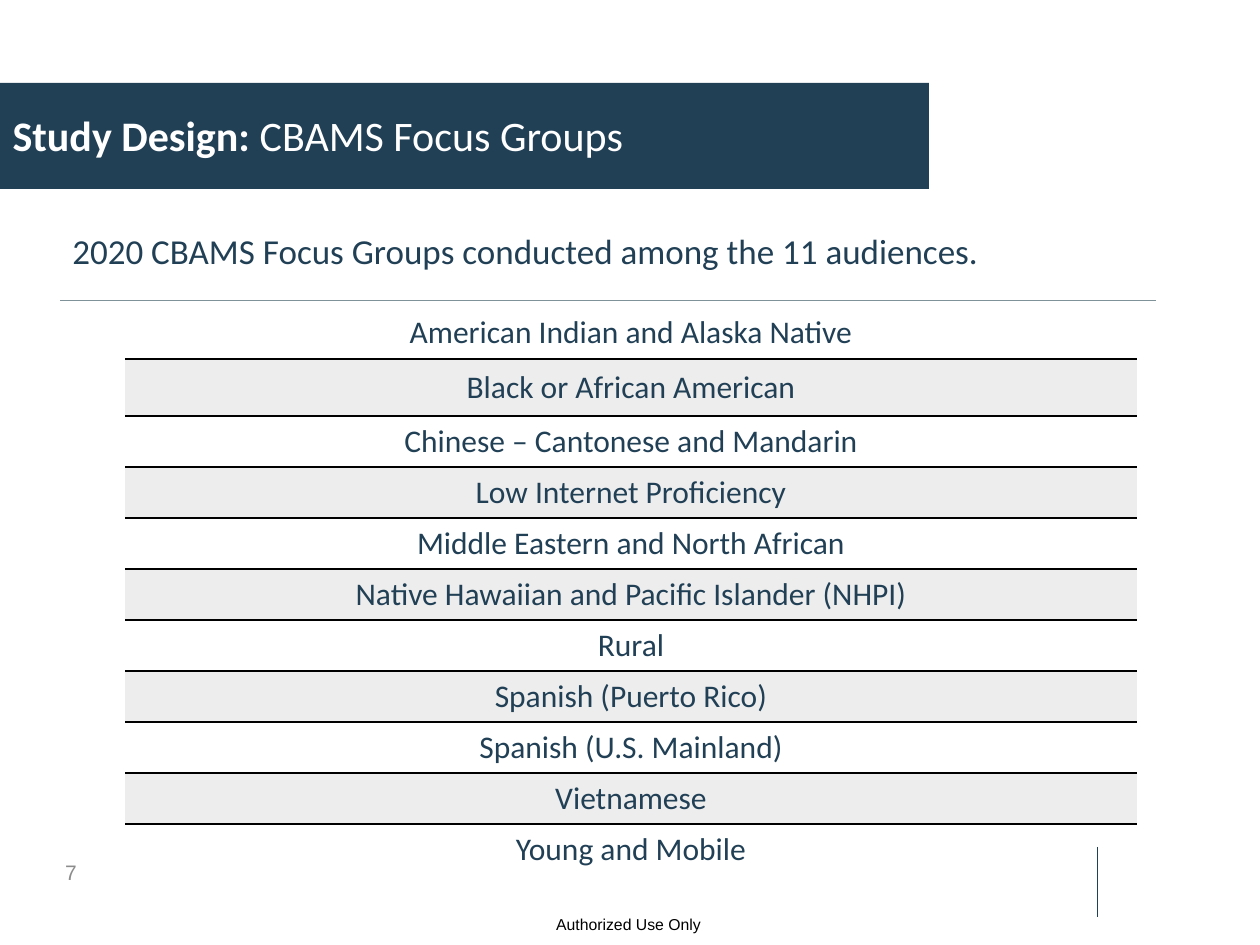
from dataclasses import dataclass

from lxml.etree import SubElement
from pptx import Presentation
from pptx.dml.color import RGBColor
from pptx.enum.shapes import MSO_CONNECTOR, MSO_SHAPE
from pptx.enum.text import MSO_ANCHOR, MSO_AUTO_SIZE, PP_ALIGN
from pptx.oxml.ns import qn
from pptx.util import Emu, Pt


@dataclass(frozen=True)
class Theme:
    navy: str = "214056"
    white: str = "FFFFFF"
    black: str = "000000"
    grey: str = "8C8C8C"
    rule: str = "7F9299"
    band: str = "A5A5A5"
    band_alpha: int = 20
    head: str = "Calibri"
    small: str = "Arial"
    title_size: int = 24
    lead_size: int = 20
    cell_size: int = 18
    page_size: int = 12
    foot_size: int = 9


THEME = Theme()
PLAIN_GRID = "{2D5ABB26-0587-4C30-8999-92F81FD0307C}"  # no style, no grid
GROUPS = [
    "American Indian and Alaska Native",
    "Black or African American",
    "Chinese – Cantonese and Mandarin",
    "Low Internet Proficiency",
    "Middle Eastern and North African",
    "Native Hawaiian and Pacific Islander (NHPI)",
    "Rural",
    "Spanish (Puerto Rico)",
    "Spanish (U.S. Mainland)",
    "Vietnamese",
    "Young and Mobile",
]


def px(n):
    return Emu(round(n * 914400 / 126))


def rgb(code):
    return RGBColor.from_string(code)


def style(para, face, size, color, align):
    para.alignment = align
    para.font.name = face
    para.font.size = Pt(size)
    para.font.color.rgb = rgb(color)


def add_text(slide, box, text, face, size, color, align):
    frame = slide.shapes.add_textbox(*map(px, box)).text_frame
    frame.word_wrap = True
    para = frame.paragraphs[0]
    para.text = text
    style(para, face, size, color, align)
    return frame


def add_rule(slide, x1, y1, x2, y2, color):
    line = slide.shapes.add_connector(
        MSO_CONNECTOR.STRAIGHT, px(x1), px(y1), px(x2), px(y2))
    line.line.color.rgb = rgb(color)
    line.line.width = Pt(0.5)
    SubElement(line._element.spPr, qn("a:effectLst"))


def add_banner(slide, x, y, w, h):
    bar = slide.shapes.add_shape(MSO_SHAPE.RECTANGLE, *map(px, (x, y, w, h)))
    bar.shadow.inherit = False
    bar.fill.solid()
    bar.fill.fore_color.rgb = rgb(THEME.navy)
    bar.line.fill.background()

    title = slide.shapes.title
    # Bring the title in front of the bar
    slide.shapes._spTree.append(title._element)
    title.left, title.top = px(x), px(y + 15)
    title.width, title.height = px(w - 10), px(h - 32)
    frame = title.text_frame
    frame.auto_size = MSO_AUTO_SIZE.NONE
    frame.vertical_anchor = MSO_ANCHOR.MIDDLE
    para = frame.paragraphs[0]
    for text, bold in (("Study Design: ", True), ("CBAMS Focus Groups", False)):
        run = para.add_run()
        run.text = text
        run.font.bold = bold
    style(para, THEME.head, THEME.title_size, THEME.white, PP_ALIGN.LEFT)


def add_lead(slide, x, y, w, h):
    frame = add_text(slide, (x, y, w - 77, h - 21),
                     "2020 CBAMS Focus Groups conducted among the 11 audiences.",
                     THEME.head, THEME.lead_size, THEME.navy, PP_ALIGN.JUSTIFY)
    frame.paragraphs[0].space_after = Pt(6)
    add_rule(slide, x, y + h, x + w, y + h, THEME.rule)


def add_edge(cell, side):
    edge = SubElement(cell._tc.get_or_add_tcPr(), qn(f"a:{side}"), w=str(Pt(1)))
    fill = SubElement(edge, qn("a:solidFill"))
    SubElement(fill, qn("a:srgbClr"), val=THEME.black)


def shade(cell):
    cell.fill.solid()
    cell.fill.fore_color.rgb = rgb(THEME.band)
    color = cell._tc.tcPr.find(f"{qn('a:solidFill')}/{qn('a:srgbClr')}")
    SubElement(color, qn("a:alpha"), val=str(THEME.band_alpha * 1000))


def add_groups(slide, x, y, w):
    """One row per audience, every second one shaded, lines between rows."""
    heights = [52, 57] + [51] * (len(GROUPS) - 2)
    table = slide.shapes.add_table(
        len(GROUPS), 1, px(x), px(y), px(w), px(sum(heights))).table
    table.first_row = table.horz_banding = False
    table._tbl.tblPr.find(qn("a:tableStyleId")).text = PLAIN_GRID
    last = len(GROUPS) - 1
    for i, (name, height) in enumerate(zip(GROUPS, heights)):
        table.rows[i].height = px(height)
        cell = table.cell(i, 0)
        cell.vertical_anchor = MSO_ANCHOR.MIDDLE
        cell.text = name
        style(cell.text_frame.paragraphs[0], THEME.head, THEME.cell_size,
              THEME.navy, PP_ALIGN.CENTER)
        if i > 0:
            add_edge(cell, "lnT")
        if i < last:
            add_edge(cell, "lnB")
        if i % 2:
            shade(cell)
        else:
            cell.fill.background()


def add_footer(slide, x, y, w, h):
    page = add_text(slide, (x + 19, y, 54, 50), "7", THEME.small,
                    THEME.page_size, THEME.grey, PP_ALIGN.RIGHT)
    page.vertical_anchor = MSO_ANCHOR.MIDDLE
    add_text(slide, (x, y + h - 32, w, 32), "Authorized Use Only", THEME.small,
             THEME.foot_size, THEME.black, PP_ALIGN.CENTER)
    add_rule(slide, x + 1081, y, x + 1081, y + 70, THEME.navy)


def main():
    deck = Presentation()
    deck.slide_width, deck.slide_height = px(1260), px(945)
    slide = deck.slides.add_slide(deck.slide_layouts[5])
    add_banner(slide, 0, 83, 929, 106)
    add_lead(slide, 60, 223, 1096, 77)
    add_groups(slide, 125, 307, 1012)
    add_footer(slide, 16, 847, 1225, 94)
    deck.save("out.pptx")


if __name__ == "__main__":
    main()
